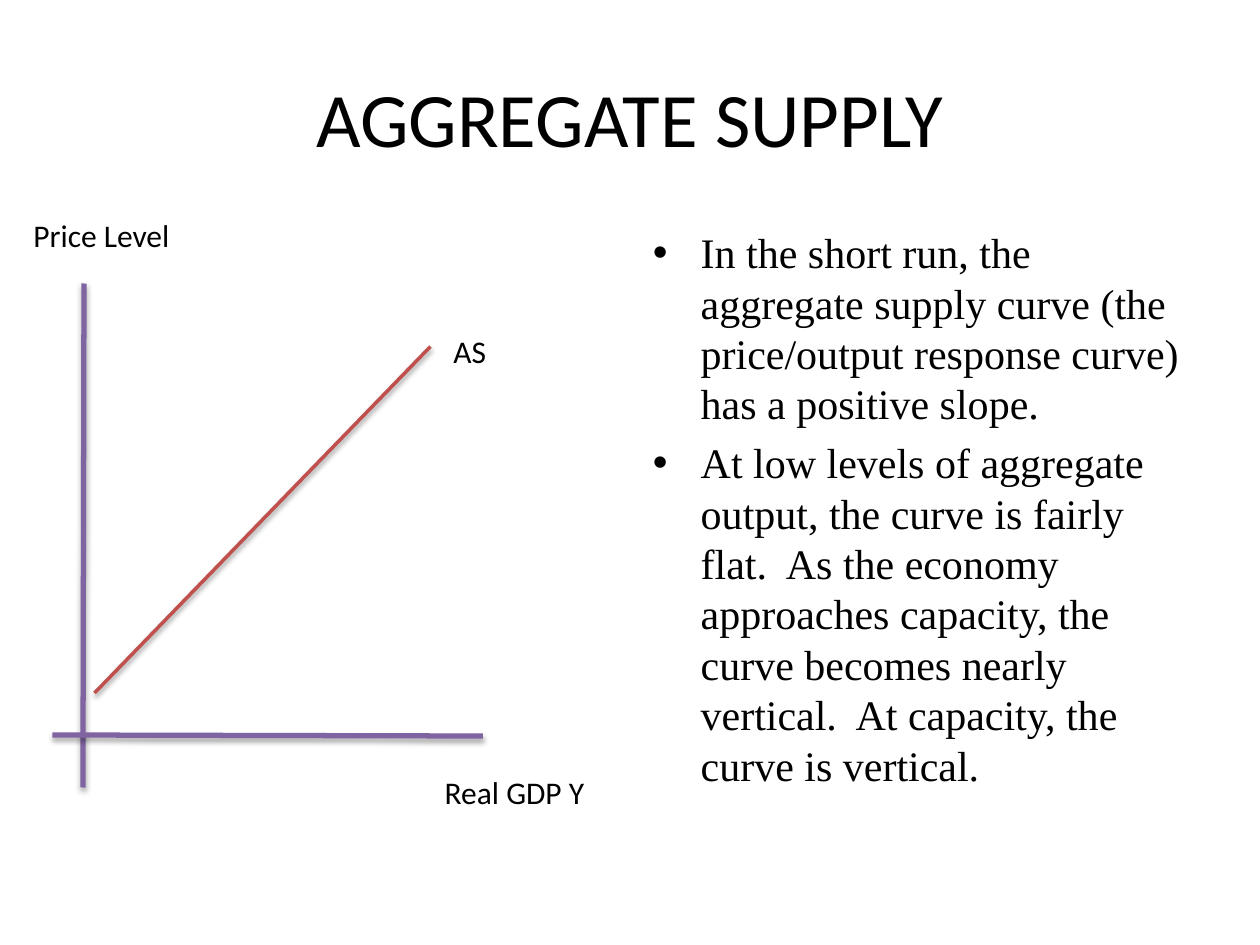
from dataclasses import dataclass

from lxml import etree
from pptx import Presentation
from pptx import util as u
from pptx.dml.color import RGBColor
from pptx.enum import shapes, text
from pptx.oxml.ns import qn


@dataclass(frozen=True)
class Theme:
    ink: str = "000000"
    paper: str = "FFFFFF"
    axis: str = "8064A2"
    curve: str = "C0504D"
    sans: str = "Calibri"
    serif: str = "Times New Roman"
    head: float = 44
    body: float = 24
    label: float = 18


THEME = Theme()
COLS, ROWS = 120, 90
UNIT = u.Inches(10) // COLS  # one square grid cell

BULLETS = (
    "In the short run, the aggregate supply curve (the price/output "
    "response curve) has a positive slope.",
    "At low levels of aggregate output, the curve is fairly flat.  As the "
    "economy approaches capacity, the curve becomes nearly vertical.  At "
    "capacity, the curve is vertical.",
)


def cells(*nums):
    return [round(n * UNIT) for n in nums]


def write(para, words, font, size):
    run = para.add_run()
    run.text = words
    run.font.name, run.font.size = font, u.Pt(size)
    run.font.color.rgb = RGBColor.from_string(THEME.ink)


def frame(slide, box):
    tf = slide.shapes.add_textbox(*cells(*box)).text_frame
    tf.word_wrap = True
    return tf


def shade(line, alpha, dist):
    """Cast a soft shadow straight down."""
    fx = etree.SubElement(line._element.spPr, qn("a:effectLst"))
    drop = etree.SubElement(
        fx, qn("a:outerShdw"), blurRad=str(u.Pt(3.1)), dist=str(u.Pt(dist)),
        dir="5400000", rotWithShape="0")
    tint = etree.SubElement(drop, qn("a:srgbClr"), val=THEME.ink)
    etree.SubElement(tint, qn("a:alpha"), val=str(alpha * 1000))


def bullet(para):
    props = para._p.get_or_add_pPr()
    hang = u.Inches(0.38)
    props.set("marL", str(hang))
    props.set("indent", str(-hang))
    etree.SubElement(props, qn("a:buFont"), typeface="Arial")
    etree.SubElement(props, qn("a:buChar"), char="•")


def title(slide, box, words):
    head = slide.shapes.title
    head.left, head.top, head.width, head.height = cells(*box)
    tf = head.text_frame
    tf.vertical_anchor = text.MSO_ANCHOR.MIDDLE
    para = tf.paragraphs[0]
    para.alignment = text.PP_ALIGN.CENTER
    write(para, words, THEME.sans, THEME.head)


def points(slide, box, items):
    tf = frame(slide, box)
    for i, item in enumerate(items):
        para = tf.add_paragraph() if i else tf.paragraphs[0]
        para.space_before = u.Pt(THEME.body * 0.2)
        bullet(para)
        write(para, item, THEME.serif, THEME.body)


def graph(slide, box):
    left, top = box[:2]
    lines = (
        ((6, 7), (5.9, 55), THEME.axis, 3, 35, 1.8),
        ((3, 50), (44, 50.1), THEME.axis, 3, 35, 1.8),
        ((7, 46), (39, 13), THEME.curve, 2, 38, 1.6),
    )
    for (ax, ay), (bx, by), color, width, alpha, dist in lines:
        line = slide.shapes.add_connector(
            shapes.MSO_CONNECTOR.STRAIGHT,
            *cells(left + ax, top + ay, left + bx, top + by))
        line.line.color.rgb = RGBColor.from_string(color)
        line.line.width = u.Pt(width)
        shade(line, alpha, dist)

    start, mid = text.PP_ALIGN.LEFT, text.PP_ALIGN.CENTER
    labels = (
        ("AS", 40, 11, 8, 4.8, start),
        ("Real GDP Y", 39, 53, 16, 8.5, mid),
        ("Price Level", 0, 0, 19, 4.8, start),
    )
    for words, x, y, w, h, align in labels:
        para = frame(slide, (left + x, top + y, w, h)).paragraphs[0]
        para.alignment = align
        write(para, words, THEME.sans, THEME.label)


def main():
    deck = Presentation()
    deck.slide_width, deck.slide_height = cells(COLS, ROWS)
    slide = deck.slides.add_slide(deck.slide_layouts[5])
    fill = slide.background.fill
    fill.solid()
    fill.fore_color.rgb = RGBColor.from_string(THEME.paper)
    title(slide, (6, 3.6, 108, 15), "AGGREGATE SUPPLY")
    points(slide, (61, 21, 53, 59.4), BULLETS)
    graph(slide, (2, 20, 55, 61.5))
    deck.save("out.pptx")


if __name__ == "__main__":
    main()
